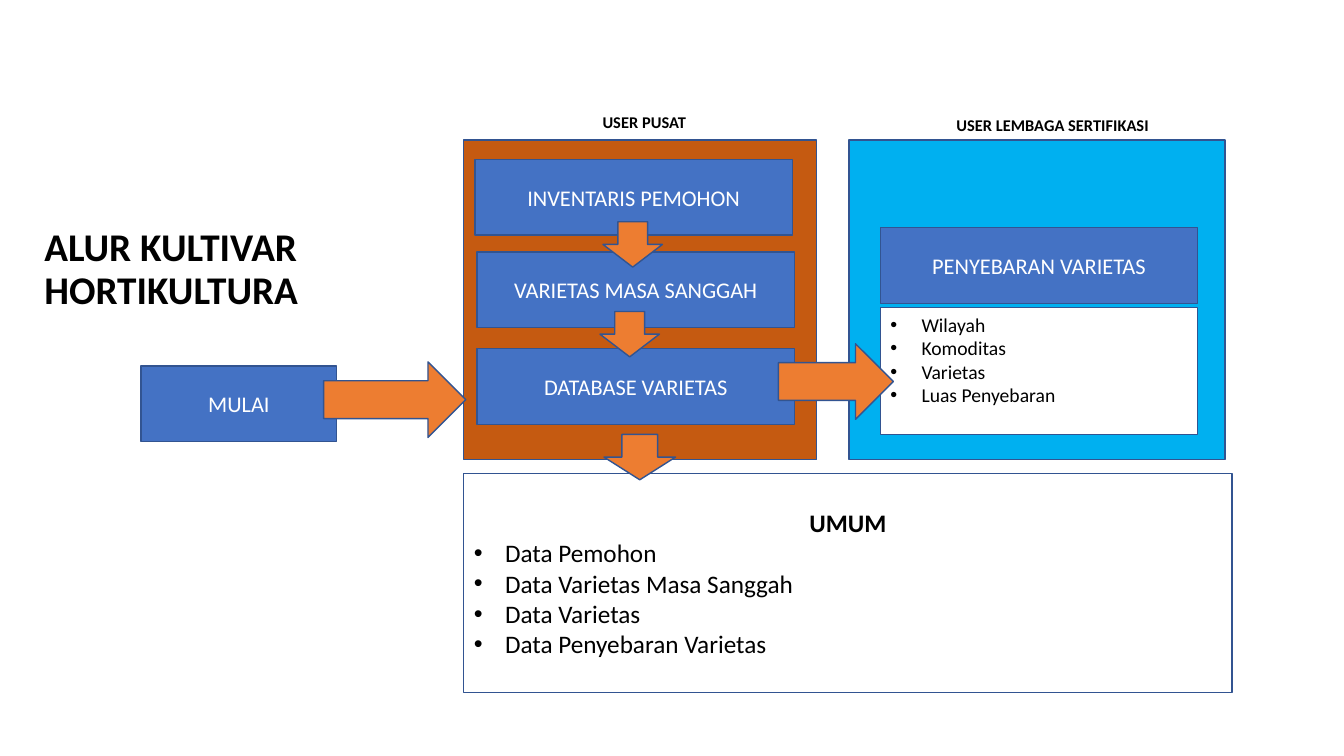
import dataclasses
import typing

import lxml.etree
import pptx
import pptx.dml.color
import pptx.enum.shapes
import pptx.enum.text
import pptx.oxml.ns
import pptx.util

CELL = pptx.util.Inches(0.1)  # grid unit for columns and rows
BULLET_INDENT = pptx.util.Inches(0.31)
SHAPES = pptx.enum.shapes.MSO_SHAPE
ALIGN = pptx.enum.text.PP_ALIGN
ANCHOR = pptx.enum.text.MSO_ANCHOR


@dataclasses.dataclass(frozen=True)
class Theme:
    font: str = "Calibri"
    black: str = "000000"
    white: str = "FFFFFF"
    outline: str = "325491"
    step: str = "4472C4"
    arrow: str = "ED7D31"
    central: str = "C55A11"
    certification: str = "00B0F0"
    title_size: float = 28
    public_size: float = 18
    step_size: float = 16
    detail_size: float = 14
    caption_size: float = 11.7


THEME = Theme()


class Frame(typing.NamedTuple):
    column: float
    row: float
    columns: float
    rows: float


class Step(typing.NamedTuple):
    label: str
    column: float
    row: float
    columns: float = 31.5


class Arrow(typing.NamedTuple):
    frame: Frame
    rotation: float = 0


class Caption(typing.NamedTuple):
    label: str
    placeholder: int
    frame: Frame


class DataList(typing.NamedTuple):
    heading: str
    items: tuple[str, ...]
    placeholder: int
    frame: Frame
    size: float
    anchor: ANCHOR


PANELS = (
    (THEME.certification, Frame(84.2, 13.9, 37.3, 31.7)),
    (THEME.central, Frame(46, 13.9, 35, 31.7)),
)
CAPTIONS = (
    Caption("USER PUSAT", 1, Frame(46.2, 10.1, 35.4, 4.2)),
    Caption("USER LEMBAGA SERTIFIKASI", 3, Frame(86.7, 10.6, 35.4, 3.8)),
)
STEPS = (
    Step("MULAI", 14, 36.3, 19.4),
    Step("INVENTARIS PEMOHON", 47.1, 15.8),
    Step("VARIETAS MASA SANGGAH", 47.3, 25),
    Step("DATABASE VARIETAS", 47.3, 34.6),
    Step("PENYEBARAN VARIETAS", 87.3, 22.6),
)
STEP_ROWS = 7.5
DATA_LISTS = (
    DataList("", ("Wilayah", "Komoditas", "Varietas", "Luas Penyebaran"),
             2, Frame(87.3, 30.5, 31.5, 12.6), THEME.detail_size, ANCHOR.TOP),
    DataList("UMUM", ("Data Pemohon", "Data Varietas Masa Sanggah",
                      "Data Varietas", "Data Penyebaran Varietas"),
             4, Frame(46, 47, 76.2, 21.7), THEME.public_size, ANCHOR.MIDDLE),
)
ARROWS = (
    Arrow(Frame(32.1, 35.9, 14.1, 7.5)),
    Arrow(Frame(77.2, 34.1, 11.4, 7.5)),
    Arrow(Frame(60.5, 21.3, 4.5, 5.9), 90),
    Arrow(Frame(60.2, 30.2, 4.5, 5.9), 90),
    Arrow(Frame(61.2, 41.8, 4.5, 7.1), 90),
)


def rgb(value: str) -> pptx.dml.color.RGBColor:
    return pptx.dml.color.RGBColor.from_string(value)


def place(shape, frame: Frame) -> None:
    shape.left, shape.top, shape.width, shape.height = (
        round(length * CELL) for length in frame)


def paint(shape, fill: str) -> None:
    shape.fill.solid()
    shape.fill.fore_color.rgb = rgb(fill)
    shape.line.color.rgb = rgb(THEME.outline)
    shape.line.width = pptx.util.Pt(1)


def format_paragraph(paragraph, size: float, color: str = THEME.black,
                     bold: bool = False, align: ALIGN = ALIGN.LEFT,
                     spacing: float = 1, bullet: bool = False) -> None:
    paragraph.alignment = align
    paragraph.line_spacing = spacing
    paragraph.space_before = pptx.util.Pt(0)
    properties = paragraph._p.get_or_add_pPr()
    indent = BULLET_INDENT if bullet else 0
    properties.set("marL", str(indent))
    properties.set("indent", str(-indent))
    qn = pptx.oxml.ns.qn
    if bullet:
        lxml.etree.SubElement(properties, qn("a:buFont"), typeface="Arial")
        lxml.etree.SubElement(properties, qn("a:buChar"), char="•")
    else:
        lxml.etree.SubElement(properties, qn("a:buNone"))
    font = paragraph.font
    font.name, font.size, font.bold = THEME.font, pptx.util.Pt(size), bold
    font.color.rgb = rgb(color)


def fill_placeholder(slide, index: int, frame: Frame, lines: tuple[str, ...],
                     anchor: ANCHOR = ANCHOR.MIDDLE):
    """Place a template placeholder in front of what is drawn so far."""
    shape = slide.placeholders[index]
    place(shape, frame)
    shape.element.getparent().append(shape.element)
    text = shape.text_frame
    text.text = "\n".join(lines)
    text.word_wrap = True
    text.auto_size = pptx.enum.text.MSO_AUTO_SIZE.NONE
    text.vertical_anchor = anchor
    return shape


def add_block(slide, kind: SHAPES, frame: Frame, fill: str):
    shape = slide.shapes.add_shape(kind, 0, 0, CELL, CELL)
    place(shape, frame)
    shape.shadow.inherit = False
    paint(shape, fill)
    return shape


def add_step(slide, step: Step) -> None:
    frame = Frame(step.column, step.row, step.columns, STEP_ROWS)
    box = add_block(slide, SHAPES.RECTANGLE, frame, THEME.step)
    box.text_frame.text = step.label
    box.text_frame.word_wrap = True
    box.text_frame.vertical_anchor = ANCHOR.MIDDLE
    format_paragraph(box.text_frame.paragraphs[0], THEME.step_size,
                     THEME.white, align=ALIGN.CENTER)


def add_data_list(slide, data: DataList) -> None:
    headings = (data.heading,) if data.heading else ()
    box = fill_placeholder(slide, data.placeholder, data.frame,
                           headings + data.items, data.anchor)
    paint(box, THEME.white)
    for position, paragraph in enumerate(box.text_frame.paragraphs):
        heading = position < len(headings)
        format_paragraph(paragraph, data.size, bold=heading, bullet=not heading,
                         align=ALIGN.CENTER if heading else ALIGN.LEFT)


def main() -> None:
    deck = pptx.Presentation()
    deck.slide_width = pptx.util.Inches(13.33)
    deck.slide_height = pptx.util.Inches(7.5)
    slide = deck.slides.add_slide(deck.slide_layouts.get_by_name("Comparison"))

    title = fill_placeholder(slide, 0, Frame(3.4, 18.2, 45.7, 17.2),
                             ("ALUR KULTIVAR HORTIKULTURA",))
    format_paragraph(title.text_frame.paragraphs[0], THEME.title_size,
                     bold=True, spacing=0.9)
    for color, frame in PANELS:
        add_block(slide, SHAPES.RECTANGLE, frame, color)
    for caption in CAPTIONS:
        heading = fill_placeholder(slide, caption.placeholder, caption.frame,
                                   (caption.label,))
        format_paragraph(heading.text_frame.paragraphs[0], THEME.caption_size,
                         bold=True, align=ALIGN.CENTER, spacing=0.9)
    for step in STEPS:
        add_step(slide, step)
    for data in DATA_LISTS:
        add_data_list(slide, data)
    for arrow in ARROWS:
        block = add_block(slide, SHAPES.RIGHT_ARROW, arrow.frame, THEME.arrow)
        block.rotation = arrow.rotation

    deck.save("out.pptx")


if __name__ == "__main__":
    main()
